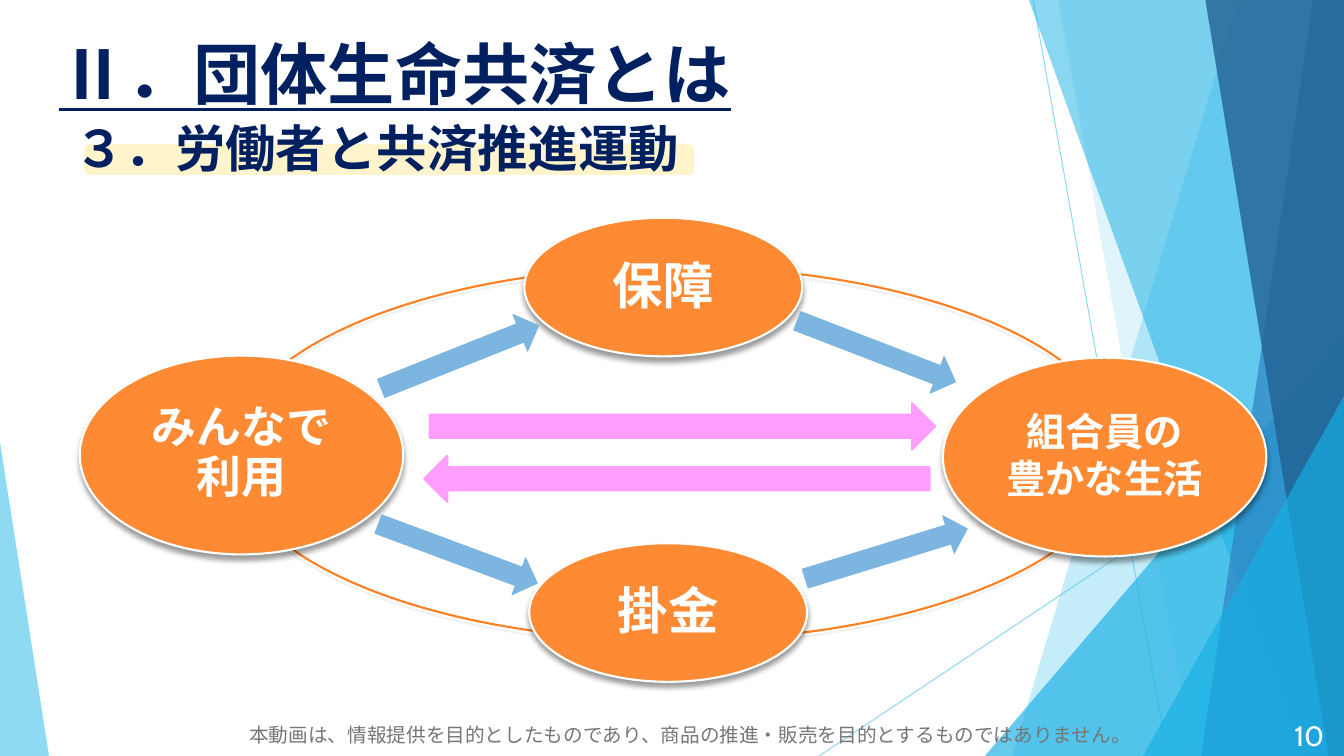
from lxml import etree
from pptx import Presentation
from pptx.dml.color import RGBColor
from pptx.enum.shapes import MSO_CONNECTOR, MSO_SHAPE
from pptx.enum.text import MSO_ANCHOR, PP_ALIGN
from pptx.oxml import parse_xml
from pptx.oxml.ns import nsdecls, qn
from pptx.util import Pt

OVAL, ARROW, ROUNDED = MSO_SHAPE.OVAL, MSO_SHAPE.RIGHT_ARROW, MSO_SHAPE.ROUNDED_RECTANGLE
STRAIGHT = MSO_CONNECTOR.STRAIGHT
LEFT, CENTER, RIGHT = PP_ALIGN.LEFT, PP_ALIGN.CENTER, PP_ALIGN.RIGHT
TOP, MIDDLE = MSO_ANCHOR.TOP, MSO_ANCHOR.MIDDLE

WHITE = RGBColor(0xFF, 0xFF, 0xFF)
NAVY = RGBColor(0x00, 0x20, 0x60)
GRAY = RGBColor(0x76, 0x76, 0x76)
PALE_GRAY = RGBColor(0xF2, 0xF2, 0xF2)
CREAM = RGBColor(0xFF, 0xF4, 0xCC)
ORANGE = RGBColor(0xFE, 0x8B, 0x34)
RING_ORANGE = RGBColor(0xFE, 0x80, 0x22)
ARROW_BLUE = RGBColor(0x7C, 0xB5, 0xE0)
PINK = RGBColor(0xFF, 0x9E, 0xFF)
SKY = RGBColor(0x5F, 0xCB, 0xEF)
CYAN = RGBColor(0x17, 0xB0, 0xE4)
BLUE = RGBColor(0x2E, 0x83, 0xC3)
DEEP_BLUE = RGBColor(0x22, 0x62, 0x92)

WIDTH, HEIGHT = 960, 540

SHADOW = (f'<a:effectLst {nsdecls("a")}><a:outerShdw blurRad="50800" dist="38100" '
          'dir="5400000" algn="t" rotWithShape="0"><a:srgbClr val="000000">'
          '<a:alpha val="40000"/></a:srgbClr></a:outerShdw></a:effectLst>')


def set_opacity(shape, percent):
    """Apply an opacity to the one colour set on the shape."""
    color = next(shape._element.spPr.iter(qn("a:srgbClr")))
    etree.SubElement(color, qn("a:alpha")).set("val", str(percent * 1000))


def paint(shape, fill=None, line=None, line_width=1.5):
    shape.shadow.inherit = False
    if fill is None:
        shape.fill.background()
    else:
        shape.fill.solid()
        shape.fill.fore_color.rgb = fill
    if line is None:
        shape.line.fill.background()
    else:
        shape.line.color.rgb = line
        shape.line.width = Pt(line_width)


def add_preset(slide, preset, box, fill=None, line=None, line_width=1.5):
    shape = slide.shapes.add_shape(preset, *map(Pt, box))
    paint(shape, fill, line, line_width)
    return shape


def write(frame, lines, size, color, font="Cabin", bold=True, align=LEFT,
          anchor=TOP, spacing=None):
    frame.word_wrap = True
    frame.vertical_anchor = anchor
    frame.text = "\n".join(lines)
    for paragraph in frame.paragraphs:
        paragraph.alignment = align
        paragraph.font.size = Pt(size)
        paragraph.font.name = font
        paragraph.font.bold = bold
        paragraph.font.color.rgb = color
        if spacing:
            paragraph.line_spacing = Pt(spacing)


def add_text(slide, box, text, size, color, **style):
    write(slide.shapes.add_textbox(*map(Pt, box)).text_frame, [text], size, color, **style)


def add_background(slide, width, height):
    for start, end in (((738, 0), (834, height)), ((width, 290), (585, height))):
        ray = slide.shapes.add_connector(STRAIGHT, *map(Pt, start + end))
        ray.line.color.rgb = SKY
        ray.line.width = Pt(0.75)
        set_opacity(ray, 70)
        etree.SubElement(ray._element.spPr, qn("a:effectLst"))

    def band(top_x, bottom_x):
        return [(top_x, 0), (width, 0), (width, height), (bottom_x, height)]

    def corner(top_y, left_x):
        return [(width, top_y), (width, height), (left_x, height)]

    facets = (
        (band(884, 723), SKY, 36),
        (band(756, 852), SKY, 20),
        (corner(240, 703.5), CYAN, 66),
        (band(735, 929.5), CYAN, 50),
        (band(938, 858), BLUE, 70),
        (band(861, 949), DEEP_BLUE, 80),
        (corner(283, 816.5), CYAN, 66),
        ([(0, 316), (35, height), (0, height)], SKY, 70),
    )
    for points, color, opacity in facets:
        start, *rest = [(Pt(x), Pt(y)) for x, y in points]
        builder = slide.shapes.build_freeform(*start)
        builder.add_line_segments(rest)
        facet = builder.convert_to_shape()
        paint(facet, color)
        set_opacity(facet, opacity)


def add_heading(slide, left, top):
    add_preset(slide, ROUNDED, (left + 25, top + 83.5, 436, 22), CREAM)
    title = slide.shapes.title
    title.left, title.top, title.width, title.height = map(Pt, (left, top, 775, 104))
    write(title.text_frame, ["Ⅱ．団体生命共済とは"], 48, NAVY, font="Arial")
    title.text_frame.paragraphs[0].font.underline = True
    add_text(slide, (left + 11, top + 60.5, 644, 51), "３．労働者と共済推進運動", 36, NAVY)


def add_stage(slide, box, lines, size, spacing=None):
    stage = add_preset(slide, OVAL, box, ORANGE, WHITE)
    properties = stage._element.spPr
    properties.replace(properties.find(qn("a:effectLst")), parse_xml(SHADOW))
    frame = stage.text_frame
    frame.margin_left = frame.margin_right = frame.margin_top = 0
    frame.margin_bottom = Pt(4)
    write(frame, lines, size, WHITE, align=CENTER, anchor=MIDDLE, spacing=spacing)


def add_cycle(slide, left, top):
    """Draw the ring, its four stages and the arrows between them."""
    for dx, dy, color in ((106.5, 38, PALE_GRAY), (107, 35, RING_ORANGE)):
        add_preset(slide, OVAL, (left + dx, top + dy, 636, 267), line=color)

    small, large = (198.5, 99), (231, 142)
    add_stage(slide, (left + 317.5, top, *small), ["保障"], 36)
    add_stage(slide, (left + 616.5, top + 100, *large), ["組合員の", "豊かな生活"], 28, 34)
    add_stage(slide, (left + 321, top + 232.5, *small), ["掛金"], 36)
    add_stage(slide, (left, top + 98.5, *large), ["みんなで", "利用"], 32, 36)

    links = ((508.5, 81.5, 21.1), (515.5, 226, -17.1), (209.5, 226, 20.4), (211, 85.5, -21.7))
    for dx, dy, angle in links:
        link = add_preset(slide, ARROW, (left + dx, top + dy, 121, 28),
                          ARROW_BLUE, ARROW_BLUE, 0.75)
        link.rotation = angle
    for dx, dy, angle in ((250, 132.5, 0), (246, 170, 180)):
        exchange = add_preset(slide, ARROW, (left + dx, top + dy, 361, 33), PINK, PINK)
        exchange.rotation = angle


def add_footer(slide, top):
    add_text(slide, (906, top, 47, 29), "10", 20, WHITE, bold=False, align=RIGHT, anchor=MIDDLE)
    add_text(slide, (31, top + 2, 924.5, 24.5),
             "本動画は、情報提供を目的としたものであり、商品の推進・販売を目的とするものではありません。",
             14, GRAY, font="Arial", bold=False, align=CENTER)


def main():
    deck = Presentation()
    deck.slide_width, deck.slide_height = Pt(WIDTH), Pt(HEIGHT)
    slide = deck.slides.add_slide(deck.slide_layouts[5])
    add_background(slide, WIDTH, HEIGHT)
    add_heading(slide, 35, 19.5)
    add_cycle(slide, 57, 155.5)
    add_footer(slide, 511)
    deck.save("out.pptx")


if __name__ == "__main__":
    main()
